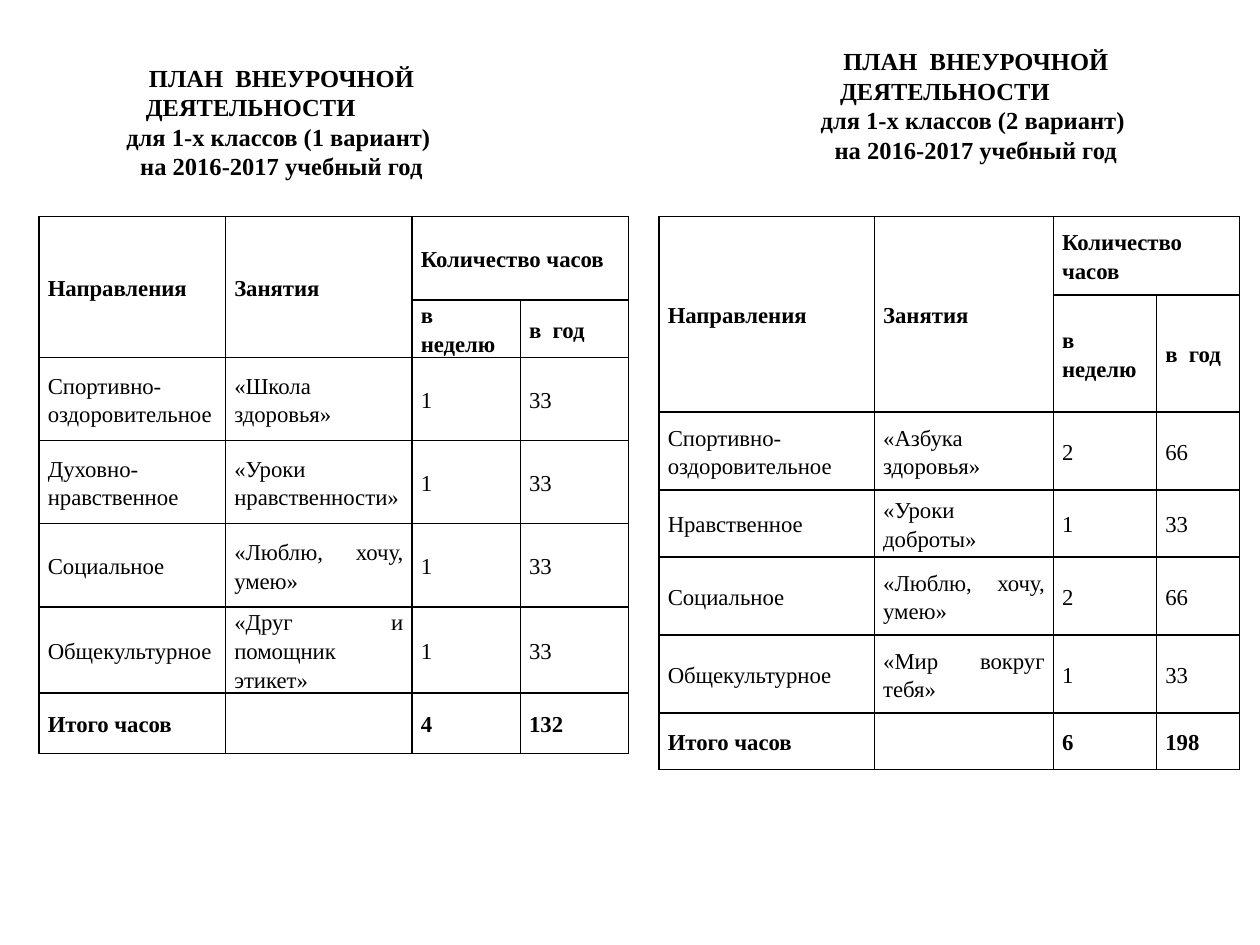
from collections import namedtuple
from dataclasses import dataclass

from lxml import etree
from pptx import Presentation
from pptx import util as u
from pptx.dml import color
from pptx.enum import text
from pptx.oxml import ns

Box = namedtuple("Box", "left top width height")


@dataclass(frozen=True)
class Theme:
    font: str = "Times New Roman"
    ink: color.RGBColor = color.RGBColor(0, 0, 0)
    title_size: u.Pt = u.Pt(14)
    table_size: u.Pt = u.Pt(13)
    border: u.Pt = u.Pt(1)


THEME = Theme()

HEADER = [
    ("Направления", "Занятия", "Количество часов", ""),
    ("", "", "в неделю", "в  год"),
]
FIRST_PLAN = [
    ("Спортивно-оздоровительное", "«Школа здоровья»", "1", "33"),
    ("Духовно-нравственное", "«Уроки нравственности»", "1", "33"),
    ("Социальное", "«Люблю, хочу, умею»", "1", "33"),
    ("Общекультурное", "«Друг и помощник \nэтикет»", "1", "33"),
    ("Итого часов", "", "4", "132"),
]
SECOND_PLAN = [
    ("Спортивно-оздоровительное", "«Азбука здоровья»", "2", "66"),
    ("Нравственное", "«Уроки доброты»", "1", "33"),
    ("Социальное", "«Люблю, хочу, умею»", "2", "66"),
    ("Общекультурное", "«Мир вокруг тебя»", "1", "33"),
    ("Итого часов", "", "6", "198"),
]


def place(box):
    return [u.Inches(length) for length in box]


def format_runs(paragraph, size, bold):
    for run in paragraph.runs:
        run.font.name = THEME.font
        run.font.size = size
        run.font.bold = bold
        run.font.color.rgb = THEME.ink


def add_borders(cell):
    properties = cell._tc.get_or_add_tcPr()
    for side in ("a:lnL", "a:lnR", "a:lnT", "a:lnB"):
        line = etree.SubElement(properties, ns.qn(side), w=str(int(THEME.border)))
        fill = etree.SubElement(line, ns.qn("a:solidFill"))
        etree.SubElement(fill, ns.qn("a:srgbClr"), val=str(THEME.ink))


def fill_cell(cell, value, bold):
    cell.margin_left = cell.margin_right = u.Inches(0.07)
    cell.margin_top = cell.margin_bottom = 0
    cell.vertical_anchor = text.MSO_ANCHOR.MIDDLE
    add_borders(cell)
    cell.fill.background()
    if not value:
        return
    cell.text_frame.text = value
    for paragraph in cell.text_frame.paragraphs:
        paragraph.alignment = text.PP_ALIGN.JUSTIFY
        paragraph.line_spacing = 1.15
        format_runs(paragraph, THEME.table_size, bold)


def add_plan_table(slide, box, column_widths, row_heights, plan):
    rows = HEADER + plan
    table = slide.shapes.add_table(len(rows), len(column_widths), *place(box)).table
    table.first_row = False
    table.horz_banding = False
    for column, width in zip(table.columns, column_widths):
        column.width = u.Inches(width)
    for row, height in zip(table.rows, row_heights):
        row.height = u.Inches(height)
    bold_rows = {0, 1, len(rows) - 1}
    for row_index, values in enumerate(rows):
        for column_index, value in enumerate(values):
            fill_cell(table.cell(row_index, column_index), value, row_index in bold_rows)
    for column_index in (0, 1):
        table.cell(0, column_index).merge(table.cell(1, column_index))
    table.cell(0, 2).merge(table.cell(0, 3))


def add_title(slide, box, variant):
    frame = slide.shapes.add_textbox(*place(box)).text_frame
    frame.word_wrap = True
    frame.auto_size = text.MSO_AUTO_SIZE.SHAPE_TO_FIT_TEXT
    frame.vertical_anchor = text.MSO_ANCHOR.MIDDLE
    frame.margin_bottom = u.Inches(0.35)
    frame.text = (
        "ПЛАН  ВНЕУРОЧНОЙ ДЕЯТЕЛЬНОСТИ\n"
        f"для 1-х классов ({variant} вариант) \n"
        "на 2016-2017 учебный год"
    )
    for paragraph in frame.paragraphs:
        paragraph.alignment = text.PP_ALIGN.CENTER
        paragraph._p.get_or_add_pPr().set("indent", str(u.Inches(0.49)))
        format_runs(paragraph, THEME.title_size, True)


def main():
    presentation = Presentation()
    presentation.slide_width = u.Inches(10)
    presentation.slide_height = u.Inches(7.5)
    slide = presentation.slides.add_slide(presentation.slide_layouts[6])
    add_plan_table(
        slide, Box(0.31, 1.72, 4.69, 4.36), [1.48, 1.48, 0.86, 0.86],
        [0.66, 0.28, 0.66, 0.66, 0.66, 0.68, 0.48], FIRST_PLAN,
    )
    add_title(slide, Box(0.31, 0.44, 3.36, 1.35), 1)
    add_title(slide, Box(5.86, 0.31, 3.28, 1.35), 2)
    add_plan_table(
        slide, Box(5.23, 1.72, 4.61, 4.38), [1.71, 1.42, 0.82, 0.66],
        [0.62, 0.93, 0.62, 0.53, 0.62, 0.62, 0.45], SECOND_PLAN,
    )
    presentation.save("out.pptx")


if __name__ == "__main__":
    main()
